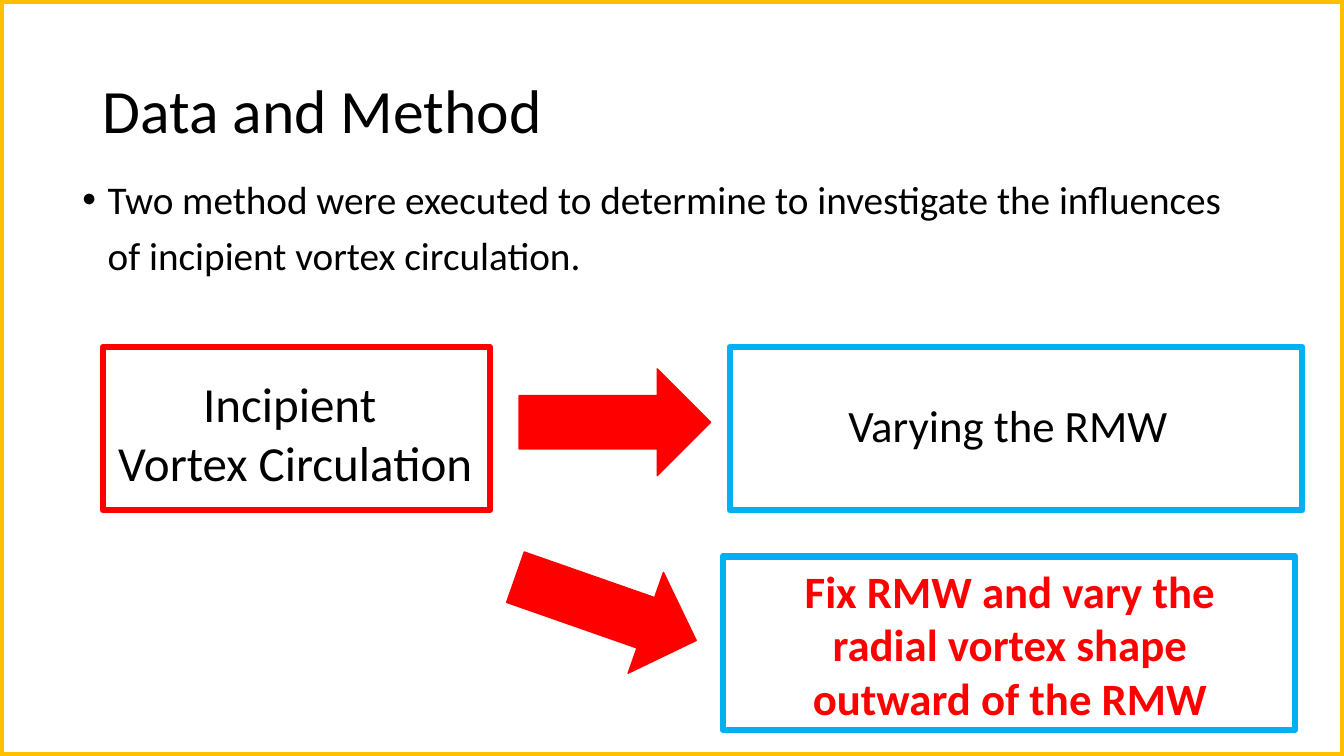
from lxml.etree import SubElement
from pptx import Presentation
from pptx.dml.color import RGBColor
from pptx.enum.shapes import MSO_SHAPE
from pptx.enum.text import MSO_ANCHOR, PP_ALIGN
from pptx.oxml.ns import qn
from pptx.util import Inches, Pt

COLORS = {"text": "000000", "frame": "FFC000", "red": "FF0000", "blue": "00B0F0"}

deck = Presentation()
deck.slide_width, deck.slide_height = Inches(13.33), Inches(7.5)
slide = deck.slides.add_slide(deck.slide_layouts[6])
COL, ROW = deck.slide_width / 100, deck.slide_height / 100


def add_block(kind, place, line, width, fill=None):
    """Place is left, top, width, height in hundredths of the slide."""
    left, top, wide, high = place
    block = slide.shapes.add_shape(
        kind, round(left * COL), round(top * ROW), round(wide * COL), round(high * ROW))
    block.shadow.inherit = False
    block.line.color.rgb = RGBColor.from_string(COLORS[line])
    block.line.width = Pt(width)
    if fill:
        block.fill.solid()
        block.fill.fore_color.rgb = RGBColor.from_string(COLORS[fill])
    else:
        block.fill.background()
    return block


def add_text(place, lines, size, color="text", bold=False, align=PP_ALIGN.CENTER):
    left, top, wide, high = place
    frame = slide.shapes.add_textbox(
        round(left * COL), round(top * ROW), round(wide * COL), round(high * ROW)).text_frame
    frame.word_wrap = True
    for index, line in enumerate(lines):
        paragraph = frame.add_paragraph() if index else frame.paragraphs[0]
        paragraph.alignment = align
        run = paragraph.add_run()
        run.text = line
        run.font.name = "Calibri"
        run.font.size = Pt(size)
        run.font.bold = bold
        run.font.color.rgb = RGBColor.from_string(COLORS[color])
    return frame


# Title
title = add_text((6.9, 5.33, 86.25, 19.33), ["Data and Method"], 44, align=PP_ALIGN.LEFT)
title.vertical_anchor = MSO_ANCHOR.MIDDLE
title.paragraphs[0].line_spacing = 0.9

# Slide frame
add_block(MSO_SHAPE.RECTANGLE, (0, 0, 100, 100), "frame", 6)

# Starting point
add_block(MSO_SHAPE.RECTANGLE, (7.65, 45.87, 28.8, 21.6), "red", 4.5)
add_text((6.15, 48.8, 31.65, 17.07), ["Incipient ", "Vortex Circulation"], 35)

# Arrows to the two methods
for left, top, angle in [(38.63, 48.8, 0), (37.95, 73.47, 19.3)]:
    arrow = add_block(MSO_SHAPE.RIGHT_ARROW, (left, top, 14.25, 14.13), "red", 1, "red")
    arrow.rotation = angle

# First method
add_block(MSO_SHAPE.RECTANGLE, (54.3, 45.87, 42.6, 21.6), "blue", 4.5)
add_text((55.05, 52, 39.9, 8.53), ["Varying the RMW"], 32)

# Second method
add_block(MSO_SHAPE.RECTANGLE, (53.78, 73.6, 42.6, 22.93), "blue", 4.5)
add_text((55.2, 73.87, 39.9, 22.93),
         ["Fix RMW and vary the", "radial vortex shape outward of the RMW"],
         32, "red", bold=True)

# Introduction: a bullet and its indented second line
introduction = add_text(
    (5.4, 23.2, 88.43, 17.33),
    ["Two method were executed to determine to investigate the influences",
     "of incipient vortex circulation."],
    28, align=PP_ALIGN.LEFT)
for paragraph, hanging in zip(introduction.paragraphs, (True, False)):
    paragraph.line_spacing = 0.9
    paragraph.space_before = Pt(10)
    properties = paragraph._p.get_or_add_pPr()
    properties.set("marL", str(Inches(0.25)))
    if hanging:
        properties.set("indent", str(Inches(-0.25)))
        SubElement(properties, qn("a:buFont"), typeface="Arial")
        SubElement(properties, qn("a:buChar"), char="•")

deck.save("out.pptx")
